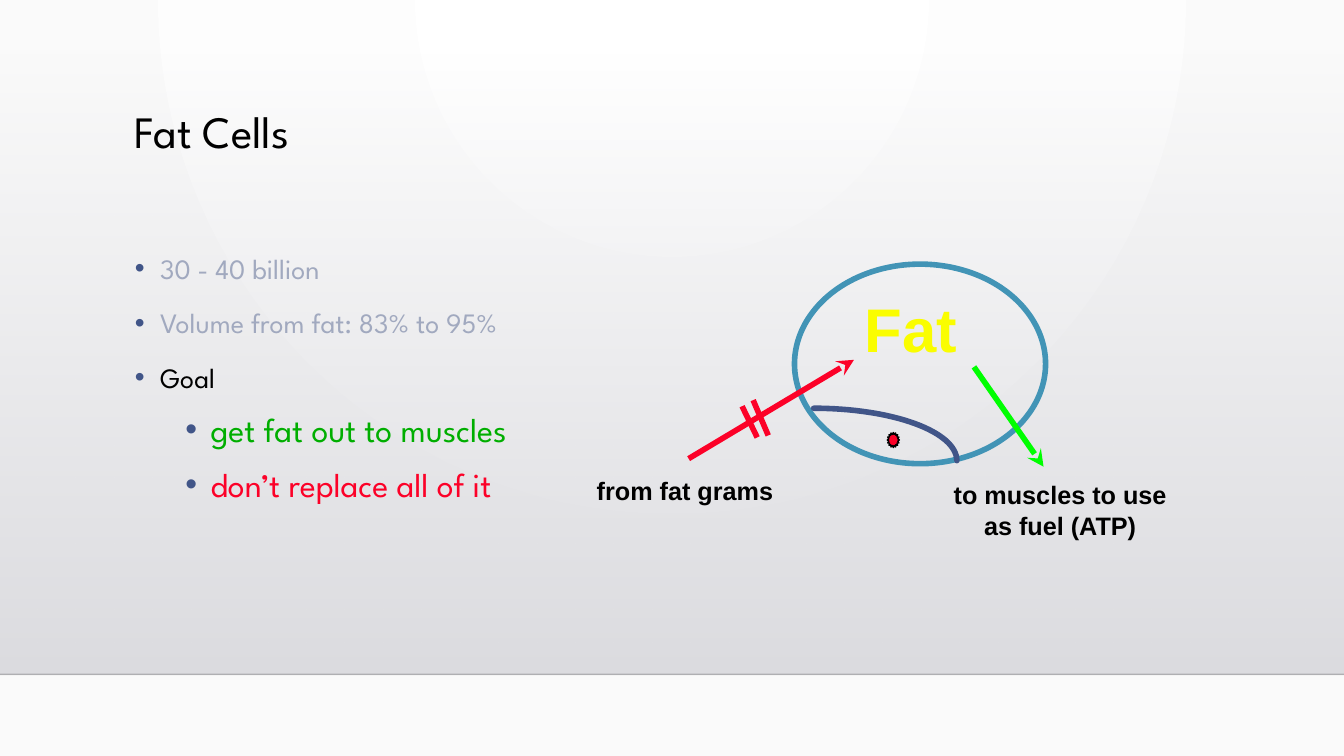
from dataclasses import dataclass
from math import cos, pi, sin

from lxml import etree
from pptx import Presentation
from pptx.dml.color import RGBColor as RGB
from pptx.enum.shapes import MSO_CONNECTOR as CONN, MSO_SHAPE as SHAPE
from pptx.enum.text import MSO_AUTO_SIZE as FIT, PP_ALIGN as ALIGN
from pptx.oxml import parse_xml
from pptx.oxml.ns import nsdecls, qn
from pptx.util import Inches, Pt


@dataclass(frozen=True)
class Theme:
    heading: str = "League Spartan"
    label: str = "Arial"
    black: str = "000000"
    muted: str = "A1A9BF"
    navy: str = "415588"
    blue: str = "4294B6"
    red: str = "FC0128"
    green: str = "00AE00"
    lime: str = "00FF00"
    yellow: str = "FAFD00"
    title_size: int = 32
    body_size: int = 20
    sub_size: int = 24
    label_size: int = 18
    fat_size: int = 44
    stroke: int = 4


def gradient(stops, direction):
    """Gradient fill from (position, colour, opacity) stops, in percent."""
    gs = "".join(
        f'<a:gs pos="{pos * 1000}"><a:srgbClr val="{color}">'
        f'<a:alpha val="{opacity * 1000}"/></a:srgbClr></a:gs>'
        for pos, color, opacity in stops)
    return parse_xml(f'<a:gradFill {nsdecls("a")} rotWithShape="1">'
                     f'<a:gsLst>{gs}</a:gsLst>{direction}</a:gradFill>')


class SlideBuilder:
    def __init__(self, slide, theme):
        self.slide, self.theme = slide, theme
        self.shapes = slide.shapes

    def background(self, stops, direction):
        fill = self.slide.background.fill
        fill.solid()
        bg_pr = self.slide.element.cSld.find(qn("p:bg")).find(qn("p:bgPr"))
        bg_pr.replace(bg_pr.find(qn("a:solidFill")), gradient(stops, direction))

    def outline(self, sp, color, width):
        sp.line.color.rgb = RGB.from_string(color)
        sp.line.width = Pt(width)

    def shape(self, kind, box, fill=None, line=None, width=1):
        sp = self.shapes.add_shape(kind, *map(Inches, box))
        sp.shadow.inherit = False
        if fill:
            sp.fill.solid()
            sp.fill.fore_color.rgb = RGB.from_string(fill)
        else:
            sp.fill.background()
        if line:
            self.outline(sp, line, width)
        else:
            sp.line.fill.background()
        return sp

    def gradient_panel(self, box, stops, direction):
        sp = self.shape(SHAPE.RECTANGLE, box)
        sp_pr = sp._element.spPr
        sp_pr.replace(sp_pr.find(qn("a:noFill")), gradient(stops, direction))

    def line(self, start, end, color, width, arrow=False, opacity=None):
        cx = self.shapes.add_connector(CONN.STRAIGHT, *map(Inches, start + end))
        self.outline(cx, color, width)
        etree.SubElement(cx._element.spPr, qn("a:effectLst"))
        ln = cx.line._get_or_add_ln()
        if opacity is not None:
            clr = ln.find(".//" + qn("a:srgbClr"))
            etree.SubElement(clr, qn("a:alpha"), val=str(opacity * 1000))
        if arrow:
            etree.SubElement(ln, qn("a:tailEnd"), type="stealth")

    def quarter_arc(self, center, radii, color, width, steps=32):
        """Arc from the top of an ellipse to its right end."""
        (x, y), (rx, ry) = center, radii
        angles = [pi / 2 * i / steps for i in range(steps + 1)]
        points = [(Inches(x + rx * sin(a)), Inches(y - ry * cos(a))) for a in angles]
        fb = self.shapes.build_freeform(*points[0])
        fb.add_line_segments(points[1:], close=False)
        sp = fb.convert_to_shape()
        sp.shadow.inherit = False
        sp.fill.background()
        self.outline(sp, color, width)
        sp.line._get_or_add_ln().set("cap", "rnd")

    def text(self, box, paragraphs, wrap=True, fit=FIT.NONE):
        """Paragraphs are dicts of text and style."""
        tf = self.shapes.add_textbox(*map(Inches, box)).text_frame
        tf.word_wrap, tf.auto_size = wrap, fit
        for i, style in enumerate(paragraphs):
            p = tf.paragraphs[0] if i == 0 else tf.add_paragraph()
            self.paragraph(p, first=i == 0, **style)

    def paragraph(self, p, text, size, color, font, bold=False, align=ALIGN.LEFT,
                  spacing=1.0, before=0, indent=None, first=True):
        p.add_run().text = text
        p.alignment, p.line_spacing = align, spacing
        p.space_before = Pt(0 if first else before)
        if indent is not None:
            p_pr = p._p.get_or_add_pPr()
            p_pr.set("marL", str(Inches(indent)))
            p_pr.set("indent", str(Inches(-0.25)))
            bullet_color = etree.SubElement(p_pr, qn("a:buClr"))
            etree.SubElement(bullet_color, qn("a:srgbClr"), val=self.theme.navy)
            etree.SubElement(p_pr, qn("a:buFont"), typeface="Arial")
            etree.SubElement(p_pr, qn("a:buChar"), char="•")
        p.font.name, p.font.size, p.font.bold = font, Pt(size), bold
        p.font.color.rgb = RGB.from_string(color)

    def label(self, box, text, size, color, align=ALIGN.LEFT, wrap=False):
        style = dict(text=text, size=size, color=color, align=align,
                     font=self.theme.label, bold=True)
        self.text(box, [style], wrap, FIT.SHAPE_TO_FIT_TEXT)


def main():
    prs = Presentation()
    prs.slide_width, prs.slide_height = Inches(13.33), Inches(7.5)
    t = Theme()
    s = SlideBuilder(prs.slides.add_slide(prs.slide_layouts[6]), t)

    # Backdrop
    s.background(
        [(0, "FFFFFF", 100), (100, "FAFAFA", 100)],
        '<a:path path="circle"><a:fillToRect l="43000" r="43000" b="100000"/></a:path>')
    s.gradient_panel((0, 0.51, 13.33, 6.18),
                     [(0, "DCDCE0", 0), (100, "DEDEE2", 100)],
                     '<a:lin ang="5400000" scaled="0"/>')
    s.line((0, 6.69), (13.33, 6.69), "000001", 1, opacity=20)

    # Title and bullets
    s.text((1.24, 1.04, 10.5, 1.15),
           [dict(text="Fat Cells", size=t.title_size, color=t.black,
                 font=t.heading, spacing=0.9)])
    main_level = dict(size=t.body_size, before=10, indent=0.25)
    sub_level = dict(size=t.sub_size, before=5, indent=0.75)
    bullets = [
        ("30 - 40 billion", t.muted, main_level),
        ("Volume from fat: 83% to 95%", t.muted, main_level),
        ("Goal", t.black, main_level),
        ("get fat out to muscles", t.green, sub_level),
        ("don’t replace all of it", t.red, sub_level),
    ]
    s.text((1.24, 2.38, 10.5, 3.6),
           [dict(text=text, color=color, font=t.heading, spacing=1.2, **level)
            for text, color, level in bullets])

    # Fat cell with its nucleus
    s.shape(SHAPE.OVAL, (7.88, 2.62, 2.49, 1.98), line=t.blue, width=t.stroke)
    s.quarter_arc((8.07, 4.57), (1.42, 0.52), t.navy, t.stroke)
    s.shape(SHAPE.STAR_16_POINT, (8.8, 4.29, 0.12, 0.15), t.red, t.black)

    # Blocked way in, open way out
    s.line((6.83, 4.55), (8.47, 3.57), t.red, t.stroke, arrow=True)
    s.line((7.36, 4.03), (7.51, 4.34), t.red, t.stroke)
    s.line((7.47, 3.97), (7.62, 4.32), t.red, t.stroke)
    s.line((9.66, 3.64), (10.35, 4.63), t.lime, t.stroke, arrow=True)

    # Labels
    s.label((9.33, 4.71, 2.37, 0.7), "to muscles to use as fuel (ATP)",
            t.label_size, t.black, ALIGN.CENTER, wrap=True)
    s.label((8.48, 2.84, 1.25, 0.84), "Fat", t.fat_size, t.yellow)
    s.label((5.82, 4.67, 1.95, 0.4), "from fat grams", t.label_size, t.black)

    prs.save("out.pptx")


if __name__ == "__main__":
    main()
